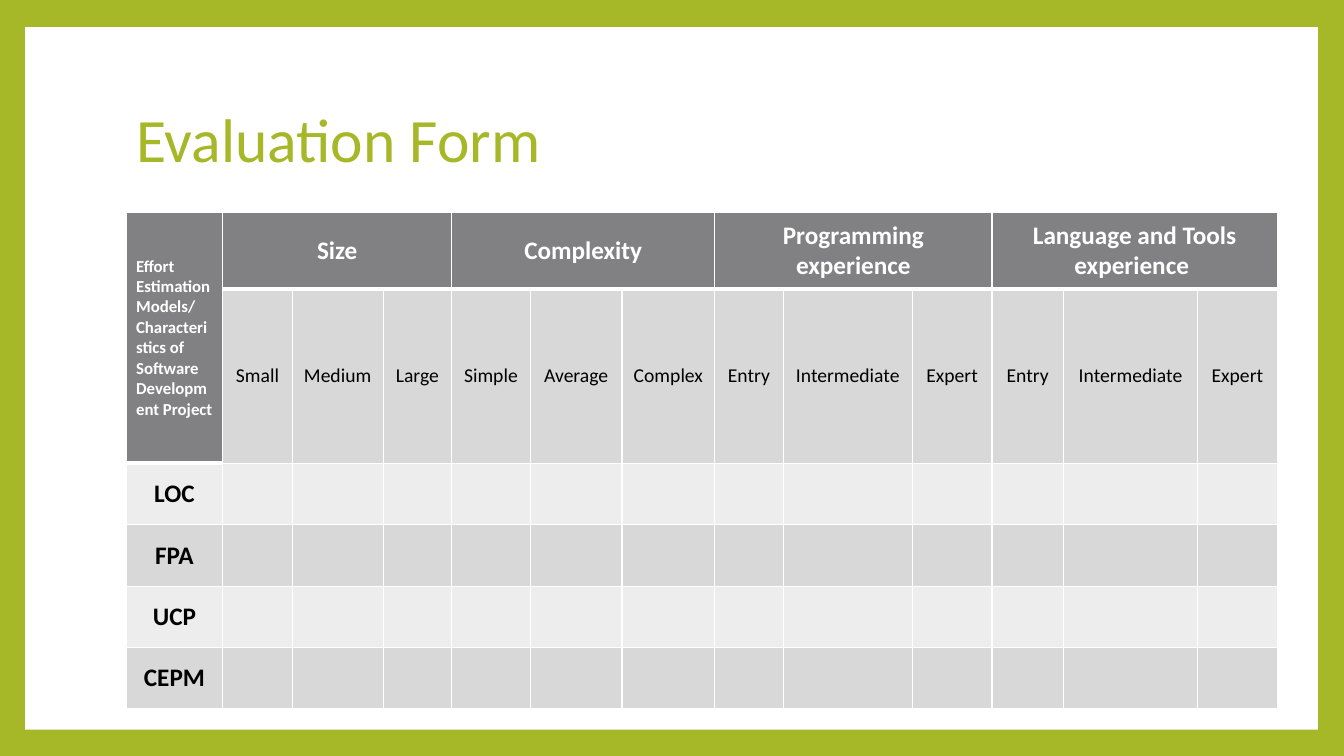
from lxml import etree
from pptx import Presentation
from pptx.dml.color import RGBColor
from pptx.enum.shapes import MSO_SHAPE
from pptx.enum.text import MSO_ANCHOR, PP_ALIGN
from pptx.oxml.ns import qn
from pptx.util import Inches, Pt

RECT = MSO_SHAPE.RECTANGLE
MIDDLE = MSO_ANCHOR.MIDDLE
LEFT, CENTER = PP_ALIGN.LEFT, PP_ALIGN.CENTER
FONT = "Calibri"
COLORS = {"green": "A6B727", "white": "FFFFFF", "black": "000000",
          "head": "818183", "dark": "D8D8D9", "light": "EDEDED"}

WIDTHS = [0.96, 0.69, 0.9, 0.68, 0.78, 0.91, 0.92, 0.68, 1.28, 0.79, 0.71, 1.33, 0.79]
HEIGHTS = [0.76, 1.33] + [0.61] * 4
CORNER = "Effort Estimation Models/ Characteristics of Software Development Project"
SKILL = ["Entry", "Intermediate", "Expert"]
GROUPS = [
    ("Size", ["Small", "Medium", "Large"]),
    ("Complexity", ["Simple", "Average", "Complex"]),
    ("Programming experience", SKILL),
    ("Language and Tools experience ", SKILL),
]
MODELS = ["LOC", "FPA", "UCP", "CEPM"]


def color(name):
    return RGBColor.from_string(COLORS[name])


class Deck:
    def __init__(self):
        self.prs = Presentation()
        self.prs.slide_width = Inches(13.33)
        self.prs.slide_height = Inches(7.5)
        self.slide = self.prs.slides.add_slide(self.prs.slide_layouts[5])

    def back(self, tone):
        fill = self.slide.background.fill
        fill.solid()
        fill.fore_color.rgb = color(tone)

    def panel(self, x, y, w, h, tone):
        """Add a plain box behind everything else."""
        box = self.slide.shapes.add_shape(RECT, Inches(x), Inches(y), Inches(w), Inches(h))
        box.shadow.inherit = False
        box.fill.solid()
        box.fill.fore_color.rgb = color(tone)
        box.line.fill.background()
        self.slide.shapes._spTree.insert(2, box._element)

    def label(self, frame, text, size, tone, bold=False, align=CENTER):
        para = frame.paragraphs[0]
        para.alignment = align
        run = para.add_run()
        run.text = text
        run.font.name = FONT
        run.font.size = Pt(size)
        run.font.bold = bold
        run.font.color.rgb = color(tone)
        return para

    def title(self, text, x, y, w, h):
        shape = self.slide.shapes.title
        shape.left, shape.top = Inches(x), Inches(y)
        shape.width, shape.height = Inches(w), Inches(h)
        shape.text_frame.vertical_anchor = MIDDLE
        para = self.label(shape.text_frame, text, 44, "green", align=LEFT)
        para.line_spacing = 0.9

    def table(self, x, y, widths, heights):
        frame = self.slide.shapes.add_table(
            len(heights), len(widths), Inches(x), Inches(y),
            Inches(sum(widths)), Inches(sum(heights)))
        grid = frame.table
        grid.first_row = grid.horz_banding = False
        for col, width in zip(grid.columns, widths):
            col.width = Inches(width)
        for row, height in zip(grid.rows, heights):
            row.height = Inches(height)
        return grid

    def paint(self, cell, tone, base=1):
        """Give a cell white borders, the bottom one base points wide, and a fill."""
        props = cell._tc.get_or_add_tcPr()
        for side in "LRTB":
            width = base if side == "B" else 1
            line = etree.SubElement(props, qn(f"a:ln{side}"), w=str(Pt(width)))
            fill = etree.SubElement(line, qn("a:solidFill"))
            etree.SubElement(fill, qn("a:srgbClr"), val=COLORS["white"])
        cell.fill.solid()
        cell.fill.fore_color.rgb = color(tone)
        cell.vertical_anchor = MIDDLE


def main():
    deck = Deck()
    deck.back("green")
    deck.panel(0.25, 0.27, 12.82, 6.97, "white")
    deck.title("Evaluation Form", 1.25, 0.67, 10.8, 1.48)

    grid = deck.table(1.25, 2.11, WIDTHS, HEIGHTS)
    for row in range(len(HEIGHTS)):
        for col in range(len(WIDTHS)):
            head = row == 0 or (row, col) == (1, 0)
            tone = "head" if head else "dark" if row % 2 else "light"
            deck.paint(grid.cell(row, col), tone, 3 if head else 1)

    corner = grid.cell(0, 0)
    corner.merge(grid.cell(1, 0))
    deck.label(corner.text_frame, CORNER, 12, "white", True, LEFT)
    for group, (name, levels) in enumerate(GROUPS):
        start = 1 + group * len(levels)
        top = grid.cell(0, start)
        top.merge(grid.cell(0, start + len(levels) - 1))
        deck.label(top.text_frame, name, 18, "white", True)
        for col, level in enumerate(levels, start):
            deck.label(grid.cell(1, col).text_frame, level, 14, "black")
    for row, model in enumerate(MODELS, 2):
        deck.label(grid.cell(row, 0).text_frame, model, 18, "black", True)

    deck.prs.save("out.pptx")


if __name__ == "__main__":
    main()
